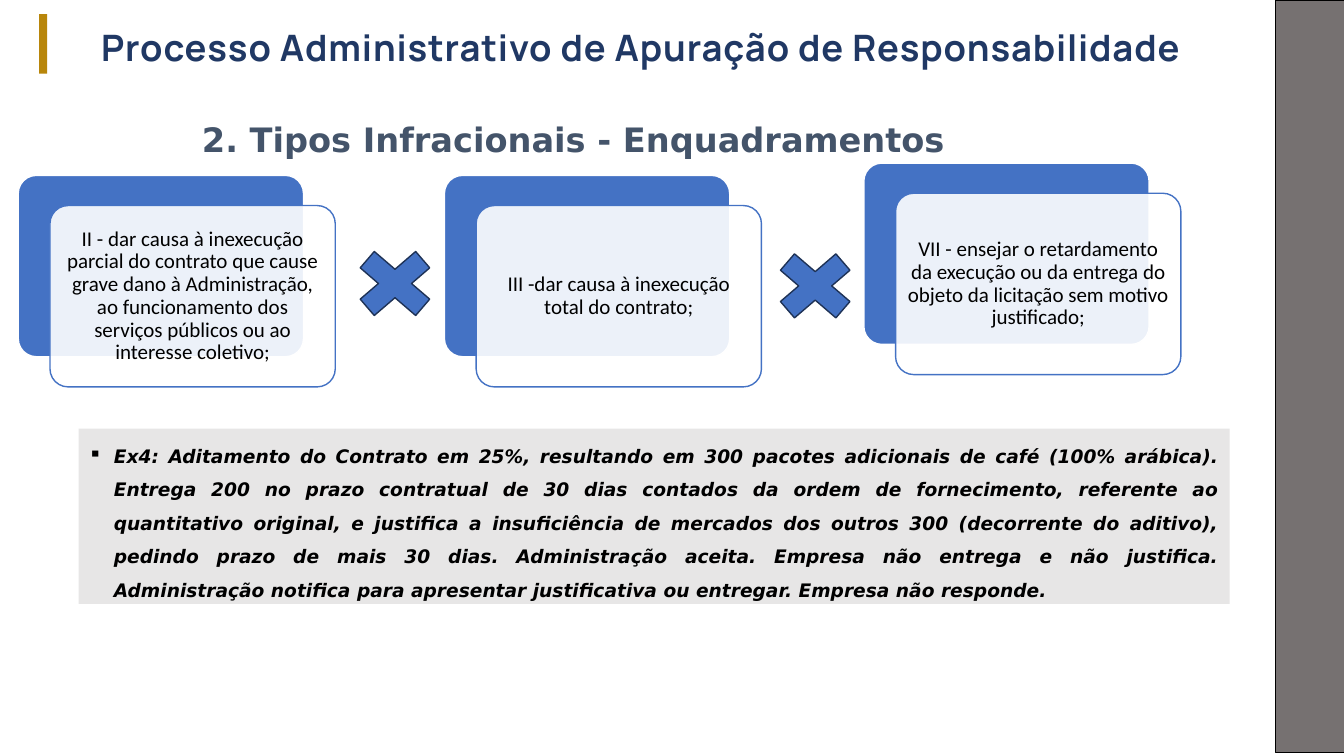
from lxml.etree import SubElement
from pptx import Presentation
from pptx.dml.color import RGBColor
from pptx.enum.shapes import MSO_SHAPE as Kind
from pptx.enum.text import MSO_ANCHOR as Anchor, MSO_AUTO_SIZE as Auto, PP_ALIGN as Align
from pptx.oxml.ns import qn
from pptx.util import Cm, Pt

TITLE = "Processo Administrativo de Apuração de Responsabilidade"
HEAD = "2. Tipos Infracionais - Enquadramentos"
CARDS = [  # left, top, text
    (0.46, 4.42, "II - dar causa à inexecução parcial do contrato que cause grave dano "
                 "à Administração, ao funcionamento dos serviços públicos ou ao "
                 "interesse coletivo;"),
    (11.2, 4.42, "III -dar causa à inexecução total do contrato;"),
    (21.77, 4.11, "VII - ensejar o retardamento da execução ou da entrega do objeto "
                  "da licitação sem motivo justificado;"),
]
CROSSES = [(8.61, 5.99), (19.2, 6.05)]
NOTE = ("Ex4: Aditamento do Contrato em 25%, resultando em 300 pacotes adicionais de "
        "café (100% arábica). Entrega 200 no prazo contratual de 30 dias contados da "
        "ordem de fornecimento, referente ao quantitativo original, e justifica a "
        "insuficiência de mercados dos outros 300 (decorrente do aditivo), pedindo "
        "prazo de mais 30 dias. Administração aceita. Empresa não entrega e não "
        "justifica. Administração notifica para apresentar justificativa ou entregar. "
        "Empresa não responde.")

HEX = dict(blue="4472C4", navy="203864", edge="1E3256", slate="44546A", gold="B8860B",
           side="767171", pale="E7E6E6", white="FFFFFF", black="000000")
CARD_W, CARD_H = 7.19, 4.57
STEP_X, STEP_Y = 0.8, 0.76


def tint(name):
    return RGBColor.from_string(HEX[name])


def place(shape, left, top, width, height):
    shape.left, shape.top = Cm(left), Cm(top)
    shape.width, shape.height = Cm(width), Cm(height)


def draw(kind, box, fill, line=None, weight=1):
    shape = slide.shapes.add_shape(kind, *map(Cm, box))
    shape.shadow.inherit = False
    shape.fill.solid()
    shape.fill.fore_color.rgb = tint(fill)
    if line:
        shape.line.color.rgb = tint(line)
        shape.line.width = Pt(weight)
    else:
        shape.line.fill.background()
    return shape


def write(shape, text, font="DejaVu Sans", size=15, color="black", bold=False,
          italic=False, align=Align.CENTER, anchor=Anchor.TOP, pad=(0, 0),
          lines=None, track=None, bullet=None):
    """Fill a shape with one formatted paragraph; pad is (side, top) in cm."""
    frame = shape.text_frame
    frame.word_wrap = True
    frame.auto_size = Auto.NONE
    frame.vertical_anchor = anchor
    frame.margin_left = frame.margin_right = Cm(pad[0])
    frame.margin_top = frame.margin_bottom = Cm(pad[1])
    para = frame.paragraphs[0]
    para.alignment = align
    if lines:
        para.line_spacing = lines
    if bullet:
        props = para._p.get_or_add_pPr()
        props.set("marL", str(Cm(0.64)))
        props.set("indent", str(-Cm(0.64)))
        SubElement(props, qn("a:buChar")).set("char", bullet)
    run = para.add_run()
    run.text = text
    face = run.font
    face.name, face.size, face.bold, face.italic = font, Pt(size), bold, italic
    face.color.rgb = tint(color)
    if track:
        face._element.set("spc", str(track))


deck = Presentation()
deck.slide_width, deck.slide_height = Cm(33.87), Cm(19.05)
slide = deck.slides.add_slide(deck.slide_layouts[5])

title = slide.shapes.title
place(title, 0.33, 0.64, 31.67, 1.12)
write(title, TITLE, font="Manrope", size=26, color="navy", bold=True, track=60)
draw(Kind.RECTANGLE, (0.99, 0.36, 0.2, 1.5), "gold")
draw(Kind.RECTANGLE, (32.14, 0.01, 1.85, 18.95), "side", "black", 0.75)

head = slide.shapes.add_textbox(Cm(-1.35), Cm(2.67), Cm(31.6), Cm(1.22))
write(head, HEAD, size=24, color="slate", bold=True, lines=Pt(38.3))

note = draw(Kind.RECTANGLE, (1.98, 10.8, 29.01, 4.42), "pale")
write(note, NOTE, size=13.3, bold=True, italic=True, align=Align.JUSTIFY,
      pad=(0.25, 0.13), lines=1.5, bullet="▪")

for left, top, text in CARDS:
    back = draw(Kind.ROUNDED_RECTANGLE, (left, top, CARD_W, CARD_H), "blue", "white")
    card = draw(Kind.ROUNDED_RECTANGLE,
                (left + STEP_X, top + STEP_Y, CARD_W, CARD_H), "white", "blue")
    back.adjustments[0] = card.adjustments[0] = 0.1
    shade = card._element.spPr.find(qn("a:solidFill"))[0]
    SubElement(shade, qn("a:alpha")).set("val", "90000")
    # The rounded corners already inset the text by about 0.13 cm
    write(card, text, font="Calibri", anchor=Anchor.MIDDLE, pad=(0.15, 0.15), lines=0.9)

for left, top in CROSSES:
    draw(Kind.MATH_MULTIPLY, (left, top, 2.69, 2.31), "blue", "edge")

deck.save("out.pptx")
